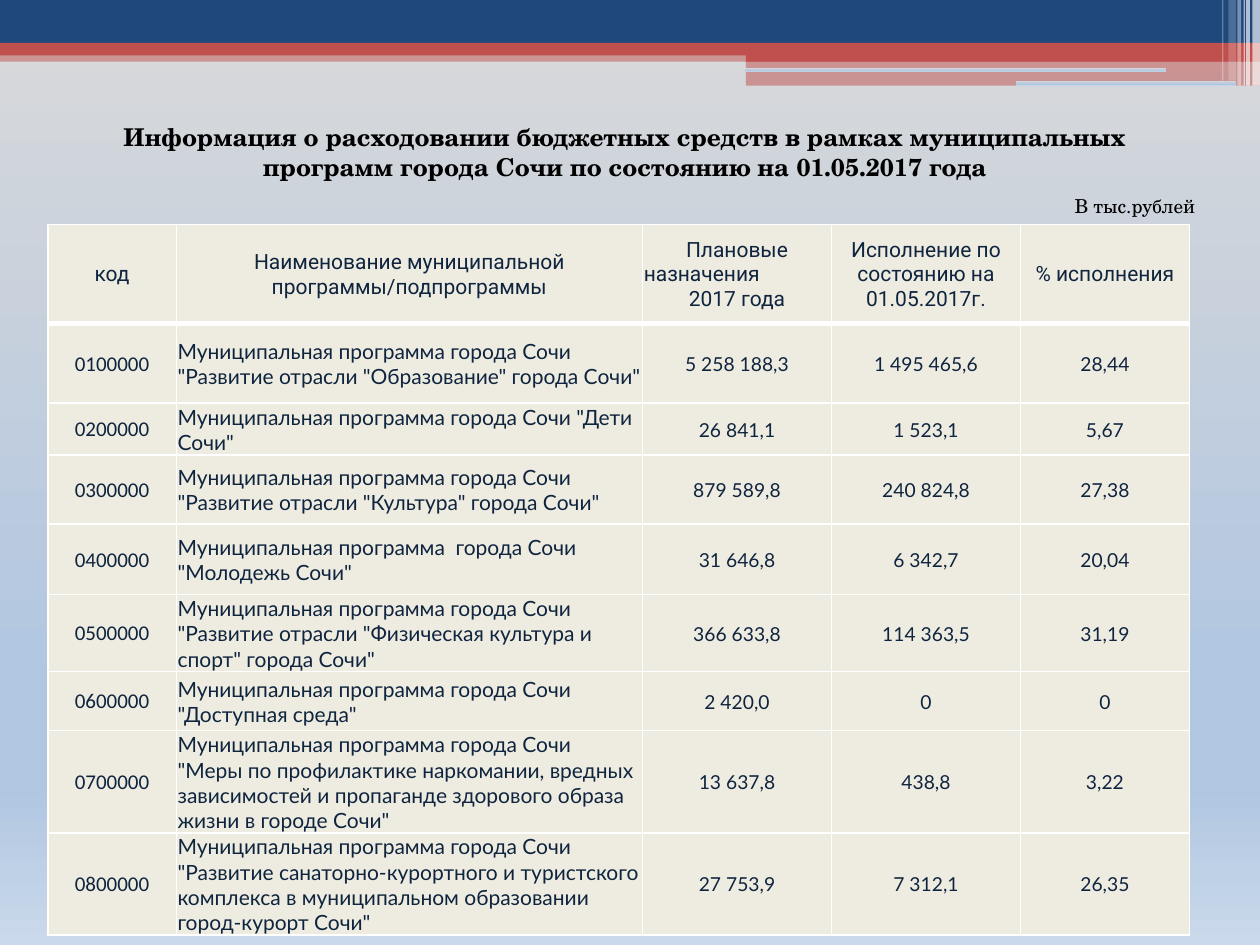
"""Build the slide on spending under Sochi's municipal programmes."""
from lxml import etree
from pptx import Presentation
from pptx.dml.color import RGBColor
from pptx.enum.shapes import MSO_SHAPE
from pptx.enum.text import MSO_ANCHOR, PP_ALIGN
from pptx.oxml.ns import qn
from pptx.util import Inches, Pt

RECT, ROUND = MSO_SHAPE.RECTANGLE, MSO_SHAPE.ROUNDED_RECTANGLE
LEFT, CENTER = PP_ALIGN.LEFT, PP_ALIGN.CENTER
MIDDLE = MSO_ANCHOR.MIDDLE

TITLE = ("Информация о расходовании бюджетных средств в рамках муниципальных "
         "программ города Сочи по состоянию на 01.05.2017 года")
UNITS = "В тыс.рублей"
HEADER = [
    [("код", CENTER)],
    [("Наименование муниципальной программы/подпрограммы", CENTER)],
    [("Плановые", CENTER), ("назначения", LEFT), ("2017 года", CENTER)],
    [("Исполнение по состоянию на 01.05.2017г.", CENTER)],
    [("% исполнения", CENTER)],
]
PROGRAMS = [
    ("0100000", 'Муниципальная программа города Сочи "Развитие отрасли "Образование" города Сочи"',
     "5 258 188,3", "1 495 465,6", "28,44"),
    ("0200000", 'Муниципальная программа города Сочи "Дети Сочи"',
     "26 841,1", "1 523,1", "5,67"),
    ("0300000", 'Муниципальная программа города Сочи "Развитие отрасли "Культура" города Сочи"',
     "879 589,8", "240 824,8", "27,38"),
    ("0400000", 'Муниципальная программа  города Сочи "Молодежь Сочи"',
     "31 646,8", "6 342,7", "20,04"),
    ("0500000", 'Муниципальная программа города Сочи "Развитие отрасли '
     '"Физическая культура и спорт" города Сочи"',
     "366 633,8", "114 363,5", "31,19"),
    ("0600000", 'Муниципальная программа города Сочи "Доступная среда"',
     "2 420,0", "0", "0"),
    ("0700000", 'Муниципальная программа города Сочи "Меры по профилактике наркомании, '
     'вредных зависимостей и пропаганде здорового образа жизни в городе Сочи"',
     "13 637,8", "438,8", "3,22"),
    ("0800000", 'Муниципальная программа города Сочи "Развитие санаторно-курортного и '
     'туристского комплекса в муниципальном образовании город-курорт Сочи"',
     "27 753,9", "7 312,1", "26,35"),
]

THEME = {
    "navy": "1F497D", "red": "C0504D", "white": "FFFFFF", "cell": "EEECE1",
    "sky": [(0, "D9D9D9"), (74, "B0C6E1"), (83, "B0C6E1"), (100, "CAD9EB")],
    "title": dict(name="TeX Gyre Schola", size=14, color="000000", bold=True),
    "units": dict(name="TeX Gyre Schola", size=11, color="000000"),
    "header": dict(name="Roboto", size=12, color="0F243E"),
    "code": dict(name="Calibri", size=12, color="0F243E"),
    "program": dict(name="Lato", size=12, color="0F243E"),
    "value": dict(name="Lato", size=11, color="0F243E"),
    "rule": 1, "header_rule": 3,
}
WIDTH, HEIGHT = 10, 7.5
BANDS = [
    (RECT, 0, 0.4, 10, 0.09, "red", 50),
    (RECT, 0, 0, 10, 0.34, "navy", 100),
    (RECT, 0, 0.34, 10, 0.1, "red", 100),
    (RECT, 5.92, 0.39, 4.08, 0.1, "red", 100),
    (RECT, 5.92, 0.48, 4.08, 0.2, "red", 50),
    (ROUND, 5.91, 0.54, 3.35, 0.03, "sky", 100),
    (ROUND, 8.06, 0.64, 1.75, 0.04, "sky", 100),
]
STRIPES = [
    (9.94, 0.06, 0.68, 65), (9.89, 0.03, 0.68, 65), (9.87, 0.01, 0.68, 60),
    (9.82, 0.03, 0.68, 40), (9.75, 0.06, 0.64, 20), (9.7, 0.01, 0.64, 30),
]
TABLE_AT = (0.38, 1.78)
COLS = [1.02, 3.7, 1.5, 1.5, 1.34]
ROWS = [0.79, 0.63, 0.41, 0.55, 0.56, 0.56, 0.47, 0.65, 0.79]
COLUMN_STYLES = ["code", "program", "value", "value", "value"]
CELL_FORMAT = dict(margin_left=Inches(0.01), margin_right=Inches(0.01),
                   margin_top=Inches(0.01), margin_bottom=0, vertical_anchor=MIDDLE)


def paint_solid(fill, color):
    fill.solid()
    fill.fore_color.rgb = RGBColor.from_string(color)


def paint_sky(fill, element):
    fill.gradient()
    stops = element.find(".//" + qn("a:gsLst"))
    for stop in list(stops):
        stops.remove(stop)
    for pos, color in THEME["sky"]:
        stop = etree.SubElement(stops, qn("a:gs"), pos=str(pos * 1000))
        etree.SubElement(stop, qn("a:srgbClr"), val=color)
    element.find(".//" + qn("a:lin")).set("ang", "5400000")


def add_band(s, kind, x, y, w, h, color, opacity):
    sp = s.shapes.add_shape(kind, *map(Inches, (x, y, w, h)))
    sp.shadow.inherit = False
    sp.line.fill.background()
    if color == "sky":
        paint_sky(sp.fill, sp.element)
        return
    paint_solid(sp.fill, THEME[color])
    if opacity < 100:
        clr = sp.element.spPr.find(".//" + qn("a:srgbClr"))
        etree.SubElement(clr, qn("a:alpha"), val=str(opacity * 1000))


def write(tf, paragraphs, style):
    tf.word_wrap = True
    for i, (text, align) in enumerate(paragraphs):
        p = tf.add_paragraph() if i else tf.paragraphs[0]
        p.alignment = align
        r = p.add_run()
        r.text = text
        formats = dict(THEME[style])
        r.font.color.rgb = RGBColor.from_string(formats.pop("color"))
        formats["size"] = Pt(formats["size"])
        for name, value in formats.items():
            setattr(r.font, name, value)


def add_text(s, box, text, align, style):
    tf = s.shapes.add_textbox(*map(Inches, box)).text_frame
    write(tf, [(text, align)], style)


def format_cell(cell, row):
    tc_pr = cell._tc.get_or_add_tcPr()
    for side in ("L", "R", "T", "B"):
        heavy = (row, side) in ((0, "B"), (1, "T"))
        width = THEME["header_rule" if heavy else "rule"]
        ln = etree.SubElement(tc_pr, qn("a:ln" + side), w=str(Pt(width)))
        solid = etree.SubElement(ln, qn("a:solidFill"))
        etree.SubElement(solid, qn("a:srgbClr"), val=THEME["white"])
    paint_solid(cell.fill, THEME["cell"])
    for name, value in CELL_FORMAT.items():
        setattr(cell, name, value)


def add_programs(s):
    size = (sum(COLS), sum(ROWS))
    frame = s.shapes.add_table(len(ROWS), len(COLS), *map(Inches, TABLE_AT + size))
    table = frame.table
    table.first_row = table.horz_banding = False
    for column, width in zip(table.columns, COLS):
        column.width = Inches(width)
    for row, height in zip(table.rows, ROWS):
        row.height = Inches(height)
    aligned = [[[(text, LEFT if col == 1 else CENTER)] for col, text in enumerate(program)]
               for program in PROGRAMS]
    for i, row in enumerate([HEADER] + aligned):
        for j, paragraphs in enumerate(row):
            cell = table.cell(i, j)
            format_cell(cell, i)
            write(cell.text_frame, paragraphs, COLUMN_STYLES[j] if i else "header")


def main():
    prs = Presentation()
    prs.slide_width, prs.slide_height = Inches(WIDTH), Inches(HEIGHT)
    s = prs.slides.add_slide(prs.slide_layouts[6])
    paint_sky(s.background.fill, s.element)
    for band in BANDS:
        add_band(s, *band)
    for x, w, h, opacity in STRIPES:
        add_band(s, RECT, x, 0, w, h, "white", opacity)
    add_programs(s)
    add_text(s, (0.51, 0.92, 8.9, 0.57), TITLE, CENTER, "title")
    add_text(s, (8.43, 1.49, 1.57, 0.29), UNITS, LEFT, "units")
    prs.save("out.pptx")


if __name__ == "__main__":
    main()
